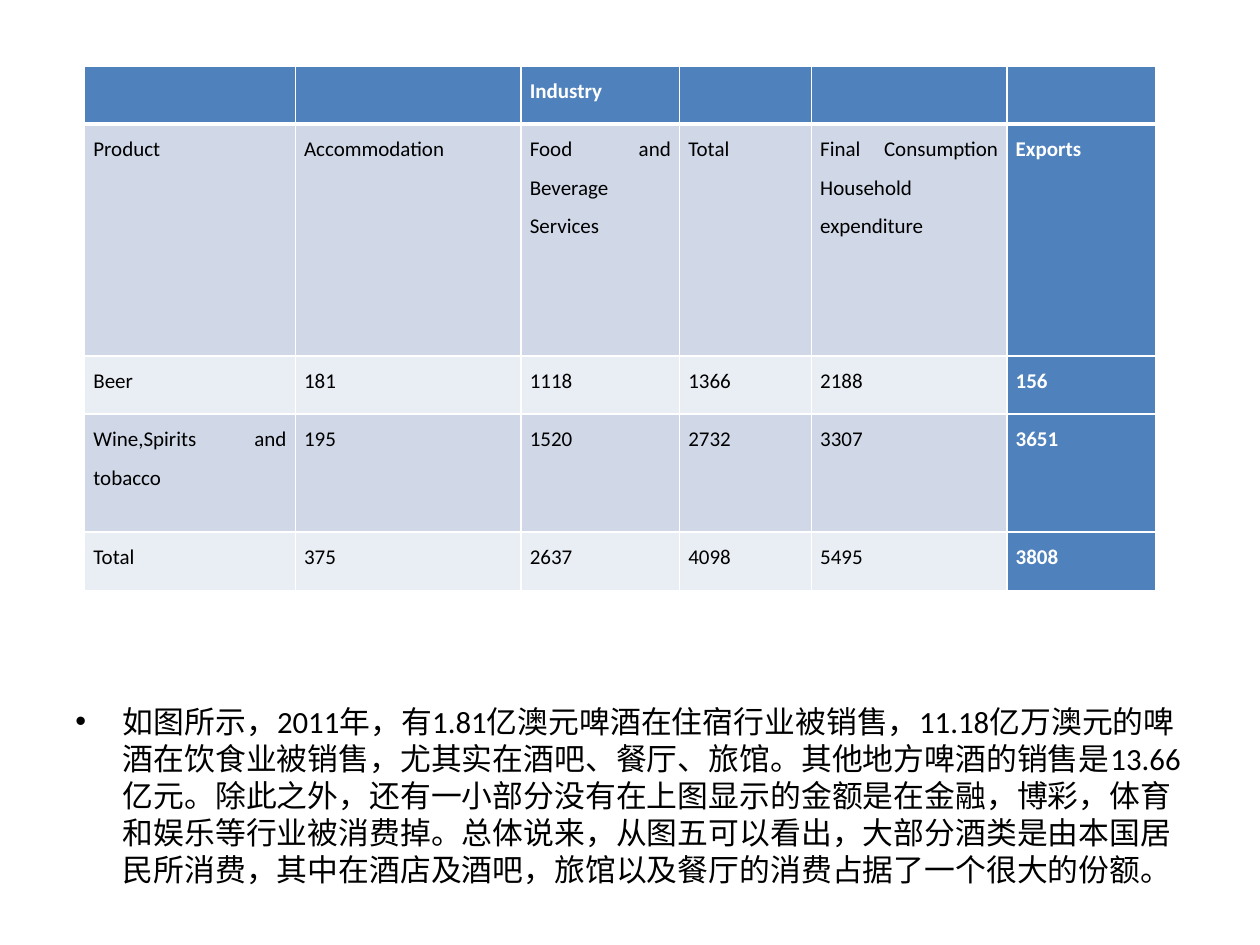
from lxml.etree import SubElement
from pptx import Presentation
from pptx.dml.color import RGBColor
from pptx.enum.text import PP_ALIGN
from pptx.oxml.ns import qn
from pptx.util import Pt

# Content
ROWS = [
    ("", "", "Industry", "", "", ""),
    ("Product", "Accommodation", "Food and Beverage Services", "Total",
     "Final Consumption Household expenditure", "Exports"),
    ("Beer", "181", "1118", "1366", "2188", "156"),
    ("Wine,Spirits and tobacco", "195", "1520", "2732", "3307", "3651"),
    ("Total", "375", "2637", "4098", "5495", "3808"),
]
NOTE = (
    "如图所示，2011年，有1.81亿澳元啤酒在住宿行业被销售，11.18亿万澳元的啤酒在饮食业被销售，"
    "尤其实在酒吧、餐厅、旅馆。其他地方啤酒的销售是13.66亿元。除此之外，还有一小部分没有在上图"
    "显示的金额是在金融，博彩，体育和娱乐等行业被消费掉。总体说来，从图五可以看出，大部分酒类是由"
    "本国居民所消费，其中在酒店及酒吧，旅馆以及餐厅的消费占据了一个很大的份额。"
)
COL_WIDTHS = [120.4, 129, 90.6, 75.4, 111.7, 85]
ROW_HEIGHTS = [33.2, 132.6, 33.2, 67.6, 33.2]
ACCENT, WHITE, BLACK = "4F81BD", "FFFFFF", "000000"
BANDS = ["E9EDF4", "D0D8E8"]


def rgb(value):
    return RGBColor.from_string(value)


def add_run(p, text, size, color, bold=False):
    r = p.add_run()
    r.text = text
    for name, value in dict(name="Calibri", size=Pt(size), bold=bold).items():
        setattr(r.font, name, value)
    r.font.color.rgb = rgb(color)


def set_borders(cell, widths):
    tcPr = cell._tc.get_or_add_tcPr()
    for i, (side, width) in enumerate(widths.items()):
        ln = tcPr.makeelement(qn("a:ln" + side), {"w": str(Pt(width))})
        fill = SubElement(ln, qn("a:solidFill"))
        SubElement(fill, qn("a:srgbClr"), val=WHITE)
        tcPr.insert(i, ln)


prs = Presentation()
prs.slide_width, prs.slide_height = Pt(720), Pt(540)
s = prs.slides.add_slide(prs.slide_layouts[6])

# Table
table = s.shapes.add_table(len(ROWS), len(COL_WIDTHS), Pt(48.4), Pt(37.6),
                           Pt(sum(COL_WIDTHS)), Pt(sum(ROW_HEIGHTS))).table
for column, width in zip(table.columns, COL_WIDTHS):
    column.width = Pt(width)
for row, height in zip(table.rows, ROW_HEIGHTS):
    row.height = Pt(height)

CELL = dict(margin_left=Pt(5), margin_right=Pt(5), margin_top=0, margin_bottom=0)
for i, texts in enumerate(ROWS):
    for j, text in enumerate(texts):
        cell = table.cell(i, j)
        strong = i == 0 or j == len(texts) - 1
        for name, value in CELL.items():
            setattr(cell, name, value)
        cell.fill.solid()
        cell.fill.fore_color.rgb = rgb(ACCENT if strong else BANDS[i % 2])
        set_borders(cell, dict(L=1, R=1, T=3 if i == 1 else 1, B=3 if i == 0 else 1))
        if text:
            p = cell.text_frame.paragraphs[0]
            p.alignment, p.line_spacing = PP_ALIGN.JUSTIFY, 1.5
            add_run(p, text, 12, WHITE if strong else BLACK, strong)

# Bulleted note
tf = s.shapes.add_textbox(Pt(36), Pt(398), Pt(648), Pt(134)).text_frame
tf.word_wrap = True
p = tf.paragraphs[0]
p.line_spacing = Pt(21.15)
pPr = p._p.get_or_add_pPr()
pPr.set("marL", str(Pt(27)))
pPr.set("indent", str(-Pt(27)))
SubElement(pPr, qn("a:buFont"), typeface="Arial")
SubElement(pPr, qn("a:buChar"), char="•")
add_run(p, NOTE, 17.6, BLACK)

prs.save("out.pptx")
